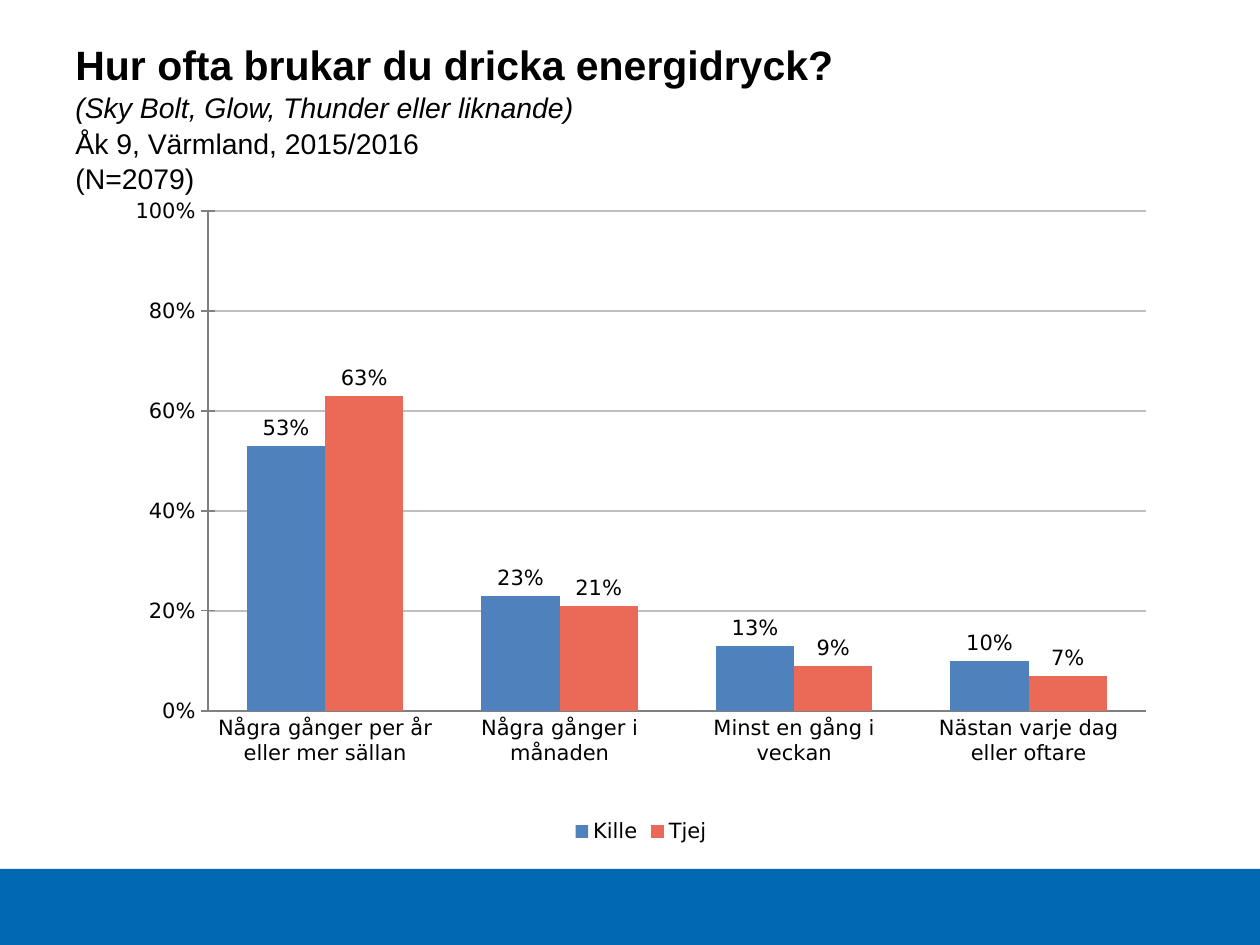
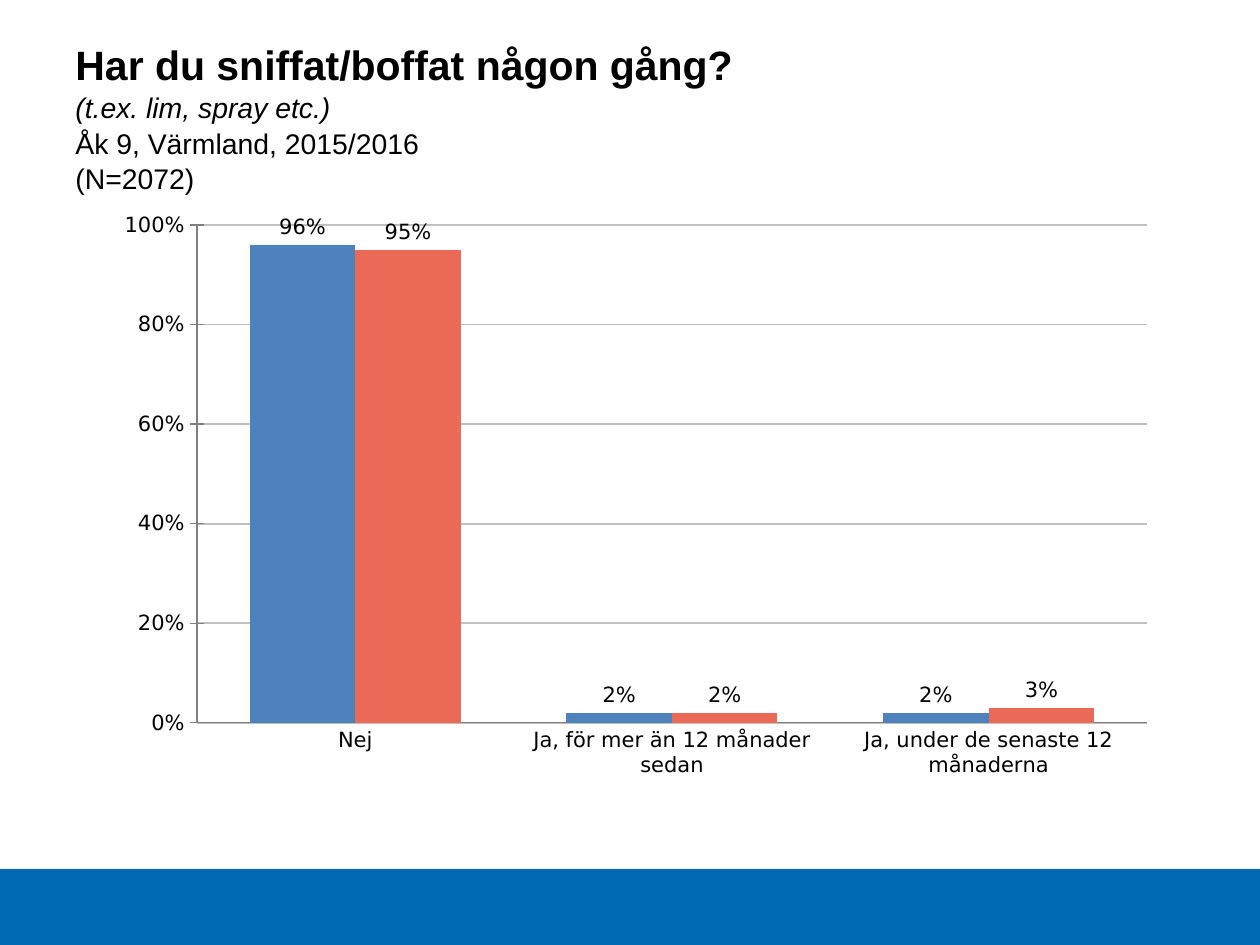
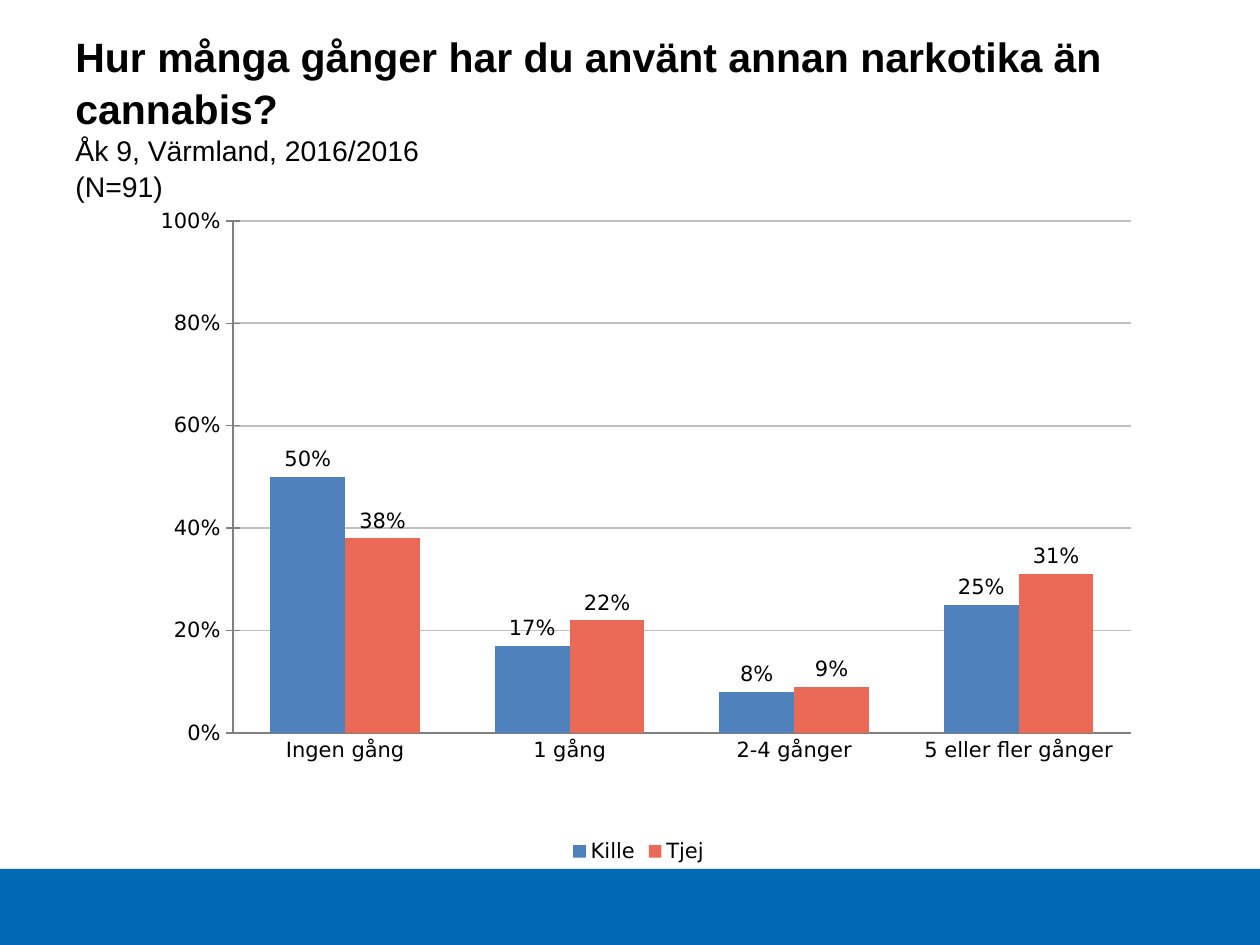
from collections import namedtuple
from dataclasses import dataclass

from lxml.etree import SubElement
from pptx import Presentation
from pptx.chart.data import CategoryChartData
from pptx.dml.color import RGBColor
from pptx.enum.chart import XL_CHART_TYPE, XL_LABEL_POSITION, XL_LEGEND_POSITION, XL_TICK_MARK
from pptx.enum.shapes import MSO_SHAPE
from pptx.enum.text import MSO_ANCHOR
from pptx.oxml.ns import qn
from pptx.util import Emu, Pt

Box = namedtuple("Box", "left top width height")
Survey = namedtuple("Survey", "question example cohort count chart_box plot_box answers has_legend")


@dataclass(frozen=True)
class Theme:
    band: RGBColor = RGBColor(0x00, 0x69, 0xB4)
    text: RGBColor = RGBColor(0x00, 0x00, 0x00)
    grid: RGBColor = RGBColor(0xC0, 0xC0, 0xC0)
    axis: RGBColor = RGBColor(0x80, 0x80, 0x80)
    boys: RGBColor = RGBColor(0x4F, 0x81, 0xBD)
    girls: RGBColor = RGBColor(0xEB, 0x69, 0x57)
    title_font: str = "Arial"
    chart_font: str = "DejaVu Sans"
    question_size: float = 23.4
    detail_size: float = 16.2
    chart_size: float = 12
    title_spacing: float = 1.04


THEME = Theme()
PX_PER_INCH = 126
PAGE = Box(0, 0, 1260, 945)
BAND = Box(0, 869, 1260, 76)
TITLE = Box(63, 38, 1091, 157)

SURVEYS = [
    Survey(
        "Hur ofta brukar du dricka energidryck?",
        "(Sky Bolt, Glow, Thunder eller liknande)",
        "Åk 9, Värmland, 2015/2016", "(N=2079)",
        Box(115, 189, 1052, 660), Box(93, 22, 938, 500),
        {
            "Några gånger per år eller mer sällan": (0.53, 0.63),
            "Några gånger i månaden": (0.23, 0.21),
            "Minst en gång i veckan": (0.13, 0.09),
            "Nästan varje dag eller oftare": (0.10, 0.07),
        }, True),
    Survey(
        "Har du sniffat/boffat någon gång?",
        "(t.ex. lim, spray etc.)",
        "Åk 9, Värmland, 2015/2016", "(N=2072)",
        Box(105, 204, 1062, 665), Box(92, 21, 950, 498),
        {
            "Nej": (0.96, 0.95),
            "Ja, för mer än 12 månader sedan": (0.02, 0.02),
            "Ja, under de senaste 12 månaderna": (0.02, 0.03),
        }, False),
    Survey(
        "Hur många gånger har du använt annan narkotika än cannabis?",
        None,
        "Åk 9, Värmland, 2016/2016", "(N=91)",
        Box(123, 204, 1031, 665), Box(110, 17, 898, 512),
        {
            "Ingen gång": (0.50, 0.38),
            "1 gång": (0.17, 0.22),
            "2-4 gånger": (0.08, 0.09),
            "5 eller fler gånger": (0.25, 0.31),
        }, True),
]


def px(length):
    return Emu(round(length * 914400 / PX_PER_INCH))


def place(box):
    return [px(length) for length in box]


def set_font(font, family, size):
    font.name = family
    font.size = Pt(size)
    font.color.rgb = THEME.text


def add_band(slide, box):
    band = slide.shapes.add_shape(MSO_SHAPE.RECTANGLE, *place(box))
    band.shadow.inherit = False
    band.fill.solid()
    band.fill.fore_color.rgb = THEME.band
    band.line.fill.background()


def add_title(slide, box, survey):
    frame = slide.shapes.add_textbox(*place(box)).text_frame
    frame.word_wrap = True
    frame.vertical_anchor = MSO_ANCHOR.MIDDLE
    heading = frame.paragraphs[0]
    heading.line_spacing = THEME.title_spacing
    lines = [survey.question, survey.example, survey.cohort, survey.count]
    for line in filter(None, lines):
        is_question = line == survey.question
        if not is_question:
            heading.add_line_break()
        run = heading.add_run()
        run.text = line
        set_font(run.font, THEME.title_font,
                 THEME.question_size if is_question else THEME.detail_size)
        run.font.bold = is_question
        run.font.italic = line == survey.example


def fix_plot_area(chart, chart_box, plot_box):
    plot_area = chart.plots[0]._element.getparent()
    for automatic in plot_area.findall(qn("c:layout")):
        plot_area.remove(automatic)
    layout = SubElement(plot_area, qn("c:layout"))
    plot_area.insert(0, layout)
    manual = SubElement(layout, qn("c:manualLayout"))
    settings = {
        "layoutTarget": "inner",
        "xMode": "edge",
        "yMode": "edge",
        "x": plot_box.left / chart_box.width,
        "y": plot_box.top / chart_box.height,
        "w": plot_box.width / chart_box.width,
        "h": plot_box.height / chart_box.height,
    }
    for tag, value in settings.items():
        SubElement(manual, qn(f"c:{tag}")).set("val", str(value))


def style_axes(chart):
    answers, shares = chart.category_axis, chart.value_axis
    for axis in (answers, shares):
        set_font(axis.tick_labels.font, THEME.chart_font, THEME.chart_size)
        axis.format.line.color.rgb = THEME.axis
        axis.minor_tick_mark = XL_TICK_MARK.NONE
    answers.major_tick_mark = XL_TICK_MARK.NONE
    shares.major_tick_mark = XL_TICK_MARK.CROSS
    shares.minimum_scale, shares.maximum_scale, shares.major_unit = 0, 1, 0.2
    shares.tick_labels.number_format = "0%"
    shares.tick_labels.number_format_is_linked = False
    shares.has_major_gridlines = True
    shares.major_gridlines.format.line.color.rgb = THEME.grid
    shares.major_gridlines.format.line.width = Pt(1)


def style_columns(plot):
    plot.gap_width = 100
    plot.overlap = 0
    plot.vary_by_categories = False
    for group, color in zip(plot.series, (THEME.boys, THEME.girls)):
        group.format.fill.solid()
        group.format.fill.fore_color.rgb = color
        group.invert_if_negative = False
        labels = group.data_labels
        labels.show_value = True
        labels.number_format = "0%"
        labels.number_format_is_linked = False
        labels.position = XL_LABEL_POSITION.OUTSIDE_END
        set_font(labels.font, THEME.chart_font, THEME.chart_size)


def add_answers(slide, survey):
    data = CategoryChartData(number_format="0%")
    data.categories = list(survey.answers)
    for group, shares in zip(("Kille", "Tjej"), zip(*survey.answers.values())):
        data.add_series(group, shares)
    chart = slide.shapes.add_chart(
        XL_CHART_TYPE.COLUMN_CLUSTERED, *place(survey.chart_box), data).chart
    set_font(chart.font, THEME.chart_font, THEME.chart_size)
    chart.has_title = False
    chart.has_legend = survey.has_legend
    if survey.has_legend:
        chart.legend.position = XL_LEGEND_POSITION.BOTTOM
        chart.legend.include_in_layout = False
        set_font(chart.legend.font, THEME.chart_font, THEME.chart_size)
    style_axes(chart)
    style_columns(chart.plots[0])
    fix_plot_area(chart, survey.chart_box, survey.plot_box)


def add_survey_slide(deck, survey):
    slide = deck.slides.add_slide(deck.slide_layouts[6])
    add_band(slide, BAND)
    add_title(slide, TITLE, survey)
    add_answers(slide, survey)


def main():
    deck = Presentation()
    deck.slide_width = px(PAGE.width)
    deck.slide_height = px(PAGE.height)
    for survey in SURVEYS:
        add_survey_slide(deck, survey)
    deck.save("out.pptx")


if __name__ == "__main__":
    main()
